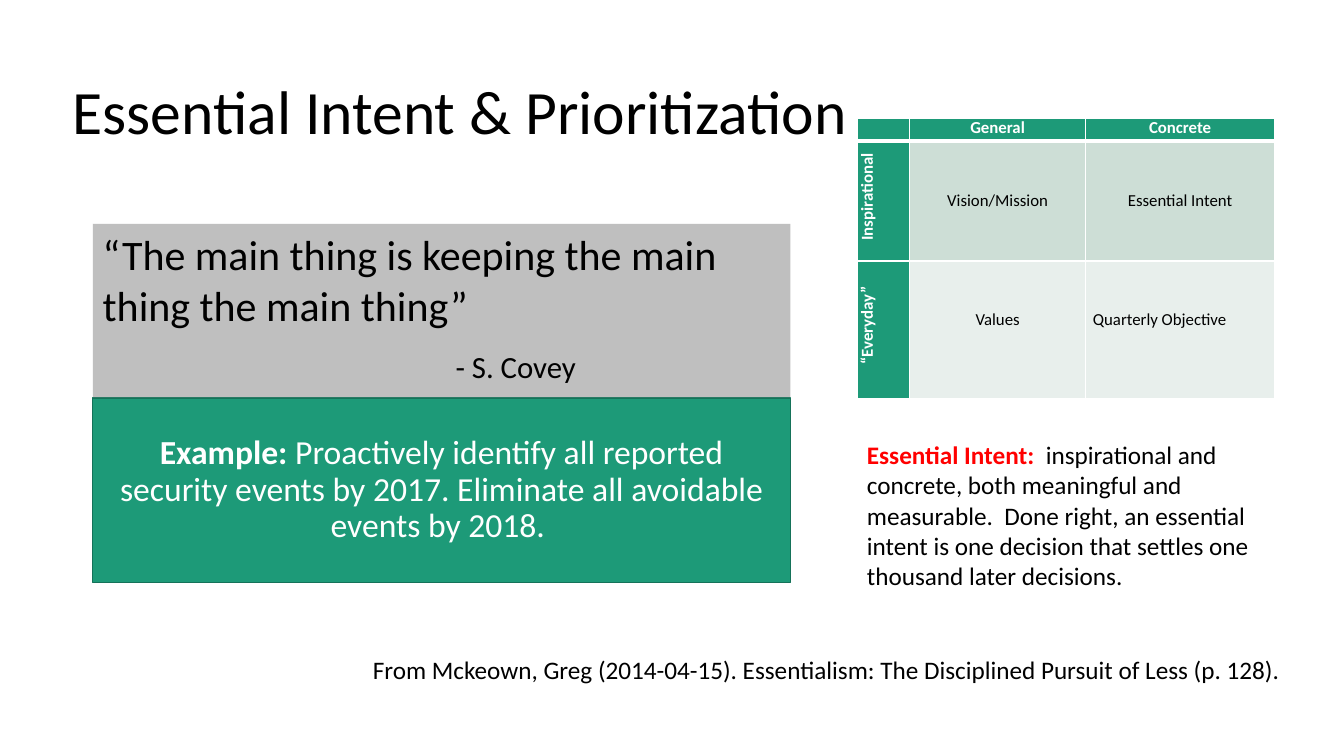
from dataclasses import dataclass

from lxml import etree
from pptx import Presentation
from pptx import util as u
from pptx.dml.color import RGBColor
from pptx.enum import shapes, text
from pptx.oxml import ns

Inches = u.Inches
FONT = "Calibri"
BLACK = RGBColor(0x00, 0x00, 0x00)
WHITE = RGBColor(0xFF, 0xFF, 0xFF)
RED = RGBColor(0xFF, 0x00, 0x00)
GRAY = RGBColor(0xBF, 0xBF, 0xBF)
GREEN = RGBColor(0x1D, 0x9A, 0x78)
DARK_GREEN = RGBColor(0x15, 0x72, 0x59)
LIGHT_GREEN = RGBColor(0xCD, 0xDE, 0xD6)
PALE_GREEN = RGBColor(0xE8, 0xEF, 0xEC)
LEFT, CENTER = text.PP_ALIGN.LEFT, text.PP_ALIGN.CENTER
TOP, MIDDLE = text.MSO_ANCHOR.TOP, text.MSO_ANCHOR.MIDDLE


@dataclass
class Box:
    left: float
    top: float
    width: float
    height: float

    def lengths(self) -> list:
        return [Inches(v) for v in (self.left, self.top, self.width, self.height)]


@dataclass
class Cell:
    words: str
    fill: RGBColor
    color: RGBColor = BLACK
    bold: bool = False
    anchor: text.MSO_ANCHOR = MIDDLE
    align: text.PP_ALIGN = CENTER
    bottom: float = 0
    rotated: bool = False


def header(words: str, rotated: bool = False) -> Cell:
    return Cell(words, GREEN, WHITE, True, TOP, rotated=rotated)


QUOTE = Box(0.92, 2.22, 6.92, 1.72)
EXAMPLE = Box(0.92, 3.95, 6.92, 1.83)
MATRIX = Box(8.5, 1.17, 4.13, 2.78)
COLUMNS = [0.52, 1.75, 1.87]
ROWS = [0.23, 1.19, 1.36]
CELLS = [
    [header(""), header("General"), header("Concrete")],
    [header("Inspirational", True), Cell("Vision/Mission", LIGHT_GREEN),
     Cell("Essential Intent", LIGHT_GREEN)],
    [header("“Everyday”", True), Cell("Values", PALE_GREEN, bottom=0.2),
     Cell("Quarterly Objective", PALE_GREEN, align=LEFT, bottom=0.2)],
]


def add_run(paragraph, words: str, size: float, color: RGBColor, bold: bool = False) -> None:
    run = paragraph.add_run()
    run.text = words
    run.font.name = FONT
    run.font.size = u.Pt(size)
    run.font.bold = bold
    run.font.color.rgb = color


def add_panel(slide, box: Box, fill: RGBColor, anchor: text.MSO_ANCHOR):
    panel = slide.shapes.add_shape(shapes.MSO_SHAPE.RECTANGLE, *box.lengths())
    panel.shadow.inherit = False
    panel.fill.solid()
    panel.fill.fore_color.rgb = fill
    panel.line.fill.background()
    panel.text_frame.word_wrap = True
    panel.text_frame.vertical_anchor = anchor
    return panel


def add_text(slide, box: Box):
    frame = slide.shapes.add_textbox(*box.lengths()).text_frame
    frame.word_wrap = True
    return frame.paragraphs[0]


def add_border(properties, side: str, width: float, position: int) -> None:
    line = etree.Element(ns.qn(f"a:ln{side}"), w=str(u.Pt(width)))
    fill = etree.SubElement(line, ns.qn("a:solidFill"))
    etree.SubElement(fill, ns.qn("a:srgbClr"), val=str(WHITE))
    properties.insert(position, line)


def format_cell(cell, content: Cell, row: int) -> None:
    cell.fill.solid()
    cell.fill.fore_color.rgb = content.fill
    cell.margin_left = cell.margin_right = Inches(0.07)
    cell.margin_top = 0
    cell.margin_bottom = Inches(content.bottom)
    cell.vertical_anchor = content.anchor
    paragraph = cell.text_frame.paragraphs[0]
    paragraph.alignment = content.align
    if content.words:
        add_run(paragraph, content.words, 12, content.color, content.bold)
    else:
        # Keeps the empty corner as low as the header row
        etree.SubElement(paragraph._p, ns.qn("a:endParaRPr"), sz="1200")
    properties = cell._tc.get_or_add_tcPr()
    if content.rotated:
        properties.set("vert", "vert270")
        paragraph._p.get_or_add_pPr().set("marL", str(Inches(0.08)))
    widths = {"L": 1, "R": 1, "T": 3 if row == 1 else 1, "B": 3 if row == 0 else 1}
    for position, (side, width) in enumerate(widths.items()):
        add_border(properties, side, width, position)


def add_matrix(slide) -> None:
    table = slide.shapes.add_table(len(ROWS), len(COLUMNS), *MATRIX.lengths()).table
    for column, width in zip(table.columns, COLUMNS):
        column.width = Inches(width)
    for index, (row, height) in enumerate(zip(table.rows, ROWS)):
        row.height = Inches(height)
        for cell, content in zip(row.cells, CELLS[index]):
            format_cell(cell, content, index)


def main() -> None:
    presentation = Presentation()
    presentation.slide_width = Inches(13.33)
    presentation.slide_height = Inches(7.5)
    slide = presentation.slides.add_slide(presentation.slide_layouts[5])

    # Title
    title = slide.shapes.title
    title.left, title.top, title.width, title.height = Box(0.62, 0.41, 11.5, 1.45).lengths()
    title.text_frame.auto_size = text.MSO_AUTO_SIZE.NONE
    title.text_frame.vertical_anchor = MIDDLE
    paragraph = title.text_frame.paragraphs[0]
    paragraph.alignment = LEFT
    paragraph.line_spacing = 0.9
    add_run(paragraph, "Essential Intent & Prioritization", 44, BLACK)

    # Example
    example = add_panel(slide, EXAMPLE, GREEN, MIDDLE)
    example.line.color.rgb = DARK_GREEN
    example.line.width = u.Pt(1)
    paragraph = example.text_frame.paragraphs[0]
    paragraph.alignment = CENTER
    paragraph.line_spacing = 0.9
    paragraph.space_before = u.Pt(10)
    add_run(paragraph, "Example: ", 24, WHITE, True)
    add_run(paragraph, "Proactively identify all reported security events by 2017. "
            "Eliminate all avoidable events by 2018. ", 24, WHITE)

    # Matrix of intents
    add_matrix(slide)

    # Definition and source
    paragraph = add_text(slide, Box(8.5, 4.31, 4.13, 1.62))
    add_run(paragraph, "Essential Intent:  ", 18, RED, True)
    add_run(paragraph, "inspirational and concrete, both meaningful and measurable.  "
            "Done right, an essential intent is one decision that settles one "
            "thousand later decisions.", 18, BLACK)
    paragraph = add_text(slide, Box(3.6, 6.44, 9.36, 0.71))
    add_run(paragraph, "From Mckeown, Greg (2014-04-15). Essentialism: "
            "The Disciplined Pursuit of Less (p. 128).", 18, BLACK)

    # Quote and its speaker
    frame = add_panel(slide, QUOTE, GRAY, TOP).text_frame
    paragraph = frame.paragraphs[0]
    paragraph.alignment = LEFT
    add_run(paragraph, "“The main thing is keeping the main thing the main thing”", 30, BLACK)
    speaker = frame.add_paragraph()
    speaker.alignment = LEFT
    speaker.space_before = u.Pt(13)
    speaker._p.get_or_add_pPr().set("marL", str(Inches(3.5)))
    add_run(speaker, "- S. Covey", 22, BLACK)

    presentation.save("out.pptx")


if __name__ == "__main__":
    main()
